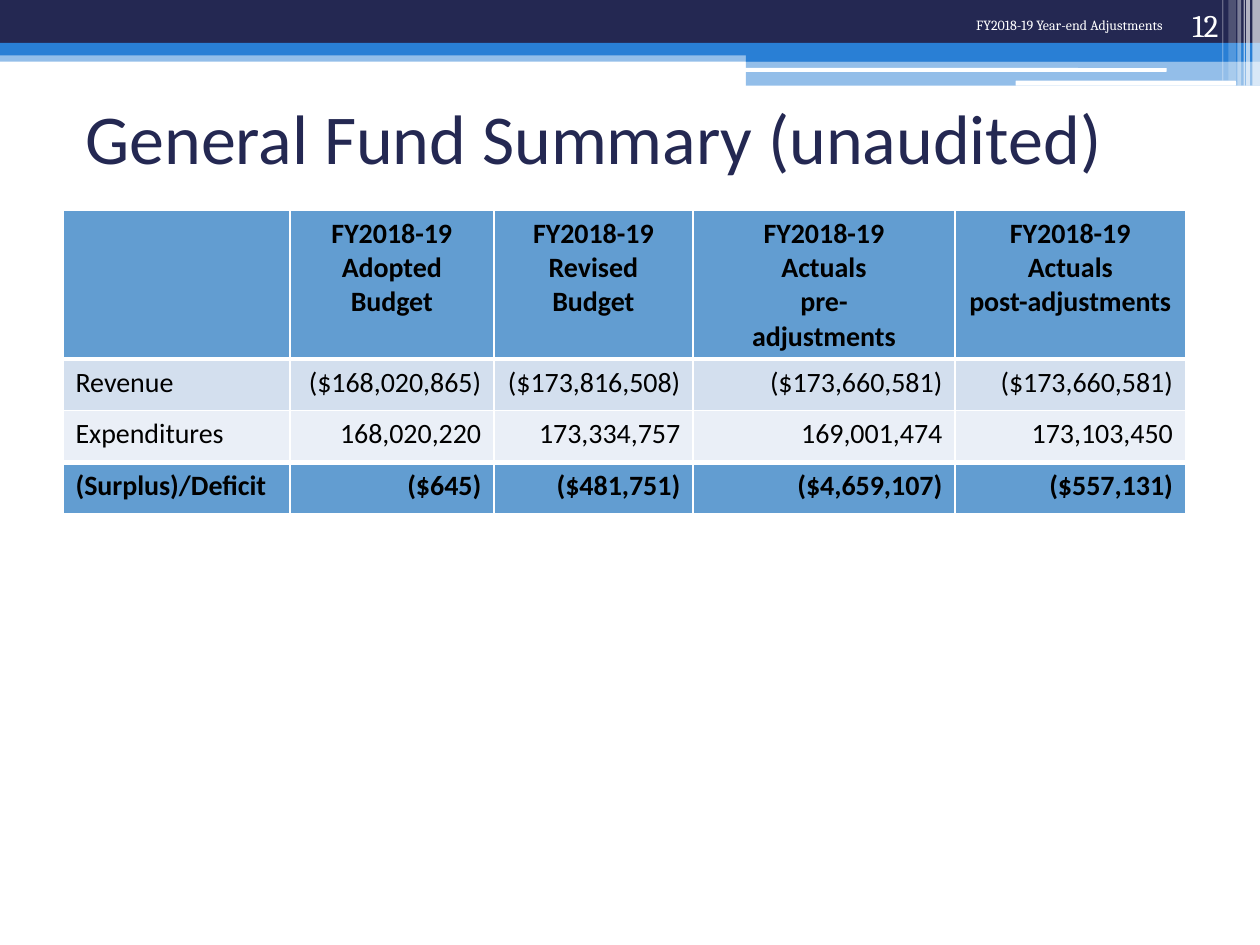
from dataclasses import dataclass

import pptx
import pptx.dml.color
import pptx.enum.shapes
import pptx.enum.text
import pptx.oxml
import pptx.oxml.ns
import pptx.util
from pptx.util import Inches

ALIGN = pptx.enum.text.PP_ALIGN
ANCHOR = pptx.enum.text.MSO_ANCHOR
SHAPE = pptx.enum.shapes.MSO_SHAPE


@dataclass(frozen=True)
class Theme:
    """Colours, fonts and type sizes of the deck."""
    navy: str = "242852"
    blue: str = "297FD5"
    white: str = "FFFFFF"
    black: str = "000000"
    accent_row: str = "629DD1"
    odd_row: str = "D3DFEE"
    even_row: str = "EAEFF7"
    body_font: str = "Calibri"
    banner_font: str = "Cambria"
    title_size: int = 40
    table_size: int = 16
    number_size: int = 18
    caption_size: int = 8


THEME = Theme()

BANNER_BARS = [
    (0, 0.4, 10, 0.09, THEME.blue, 50),
    (0, 0, 10, 0.34, THEME.navy, 100),
    (0, 0.34, 10, 0.1, THEME.blue, 100),
    (5.92, 0.39, 4.08, 0.1, THEME.blue, 100),
    (5.92, 0.48, 4.08, 0.2, THEME.blue, 50),
]
BANNER_LINES = [(5.91, 0.54, 3.35, 0.03), (8.06, 0.64, 1.75, 0.04)]
BANNER_STRIPES = [
    (9.94, 0.06, 0.68, 65),
    (9.89, 0.03, 0.68, 65),
    (9.87, 0.01, 0.68, 60),
    (9.82, 0.03, 0.68, 40),
    (9.75, 0.06, 0.64, 20),
    (9.7, 0.01, 0.64, 30),
]

COLUMN_WIDTHS = [1.8, 1.62, 1.58, 2.08, 1.83]
ROW_HEIGHTS = [1.18, 0.41, 0.41, 0.41]
ROW_FILLS = [THEME.accent_row, THEME.odd_row, THEME.even_row, THEME.accent_row]
SUMMARY = [
    ["", "FY2018-19 Adopted Budget", "FY2018-19 Revised Budget",
     "FY2018-19\nActuals\npre-\nadjustments",
     "FY2018-19\nActuals\npost-adjustments"],
    ["Revenue", "($168,020,865)", "($173,816,508)", "($173,660,581)", "($173,660,581)"],
    ["Expenditures", "168,020,220", "173,334,757", "169,001,474", "173,103,450"],
    ["(Surplus)/Deficit", "($645)", "($481,751)", "($4,659,107)", "($557,131)"],
]
POST_HEADER_INDENTS = [-0.11, -0.5]


def rgb(colour):
    """Turn a hex string into a colour value."""
    return pptx.dml.color.RGBColor.from_string(colour)


def style(paragraph, font, size, colour, align, bold=False):
    """Set the alignment and font of a paragraph."""
    paragraph.alignment = align
    paragraph.font.name = font
    paragraph.font.size = pptx.util.Pt(size)
    paragraph.font.color.rgb = rgb(colour)
    paragraph.font.bold = bold


def add_bar(slide, box, colour, opacity=100, kind=SHAPE.RECTANGLE):
    """Add a borderless bar with the given opacity in percent."""
    bar = slide.shapes.add_shape(kind, *map(Inches, box))
    bar.shadow.inherit = False
    bar.line.fill.background()
    bar.fill.solid()
    bar.fill.fore_color.rgb = rgb(colour)
    if opacity < 100:
        tint = next(bar.fill._xPr.iter(pptx.oxml.ns.qn("a:srgbClr")))
        tint.append(pptx.oxml.parse_xml(
            f'<a:alpha {pptx.oxml.ns.nsdecls("a")} val="{opacity * 1000}"/>'))


def add_label(slide, box, text, font, size, colour, align, anchor=ANCHOR.TOP):
    """Add a wrapped one-paragraph text box."""
    frame = slide.shapes.add_textbox(*map(Inches, box)).text_frame
    frame.word_wrap = True
    frame.vertical_anchor = anchor
    frame.text = text
    style(frame.paragraphs[0], font, size, colour, align)


def add_banner(slide, left, top):
    """Draw the layered banner with its caption and page number."""
    for x, y, width, height, colour, opacity in BANNER_BARS:
        add_bar(slide, (left + x, top + y, width, height), colour, opacity)
    for x, y, width, height in BANNER_LINES:
        add_bar(slide, (left + x, top + y, width, height), THEME.white,
                kind=SHAPE.ROUNDED_RECTANGLE)
    for x, width, height, opacity in BANNER_STRIPES:
        add_bar(slide, (left + x, top, width, height), THEME.white, opacity)
    add_label(slide, (left + 7.33, top + 0.08, 2, 0.5), "FY2018-19 Year-end Adjustments",
              THEME.banner_font, THEME.caption_size, THEME.white, ALIGN.RIGHT)
    add_label(slide, (left + 8.94, top, 0.83, 0.4), "12", THEME.banner_font,
              THEME.number_size, THEME.white, ALIGN.RIGHT, ANCHOR.BOTTOM)


def add_title(slide, box):
    """Place the slide title in its box."""
    add_label(slide, box, "General Fund Summary (unaudited)", THEME.body_font,
              THEME.title_size, THEME.navy, ALIGN.LEFT, ANCHOR.MIDDLE)


def set_borders(cell, top, bottom):
    """Give a cell white borders, with top and bottom widths in points."""
    for side, width in {"L": 1, "R": 1, "T": top, "B": bottom}.items():
        cell._tc.get_or_add_tcPr().append(pptx.oxml.parse_xml(
            f'<a:ln{side} {pptx.oxml.ns.nsdecls("a")} w="{pptx.util.Pt(width)}">'
            f'<a:solidFill><a:srgbClr val="{THEME.white}"/></a:solidFill></a:ln{side}>'))


def add_summary(slide, left, top):
    """Build the fund summary table."""
    last = len(SUMMARY) - 1
    table = slide.shapes.add_table(
        len(SUMMARY), len(COLUMN_WIDTHS), Inches(left), Inches(top),
        Inches(sum(COLUMN_WIDTHS)), Inches(sum(ROW_HEIGHTS))).table
    for column, width in zip(table.columns, COLUMN_WIDTHS):
        column.width = Inches(width)
    for r, (row, height) in enumerate(zip(table.rows, ROW_HEIGHTS)):
        row.height = Inches(height)
        for c, (cell, text) in enumerate(zip(row.cells, SUMMARY[r])):
            set_borders(cell, 3 if r in (1, last) else 1, 3 if r in (0, last - 1) else 1)
            cell.fill.solid()
            cell.fill.fore_color.rgb = rgb(ROW_FILLS[r])
            cell.text = text
            align = ALIGN.CENTER if r == 0 else ALIGN.RIGHT if c else ALIGN.LEFT
            for paragraph in cell.text_frame.paragraphs:
                style(paragraph, THEME.body_font, THEME.table_size, THEME.black,
                      align, r in (0, last))
    post_header = table.cell(0, len(COLUMN_WIDTHS) - 1).text_frame
    for paragraph, indent in zip(post_header.paragraphs, POST_HEADER_INDENTS):
        paragraph._p.get_or_add_pPr().set("indent", str(Inches(indent)))


def main():
    """Build and save the slide."""
    deck = pptx.Presentation()
    deck.slide_width, deck.slide_height = Inches(10), Inches(7.5)
    slide = deck.slides.add_slide(deck.slide_layouts[6])
    add_banner(slide, 0, 0)
    add_title(slide, (0.58, 0.5, 9, 1.17))
    add_summary(slide, 0.5, 1.67)
    deck.save("out.pptx")


if __name__ == "__main__":
    main()
